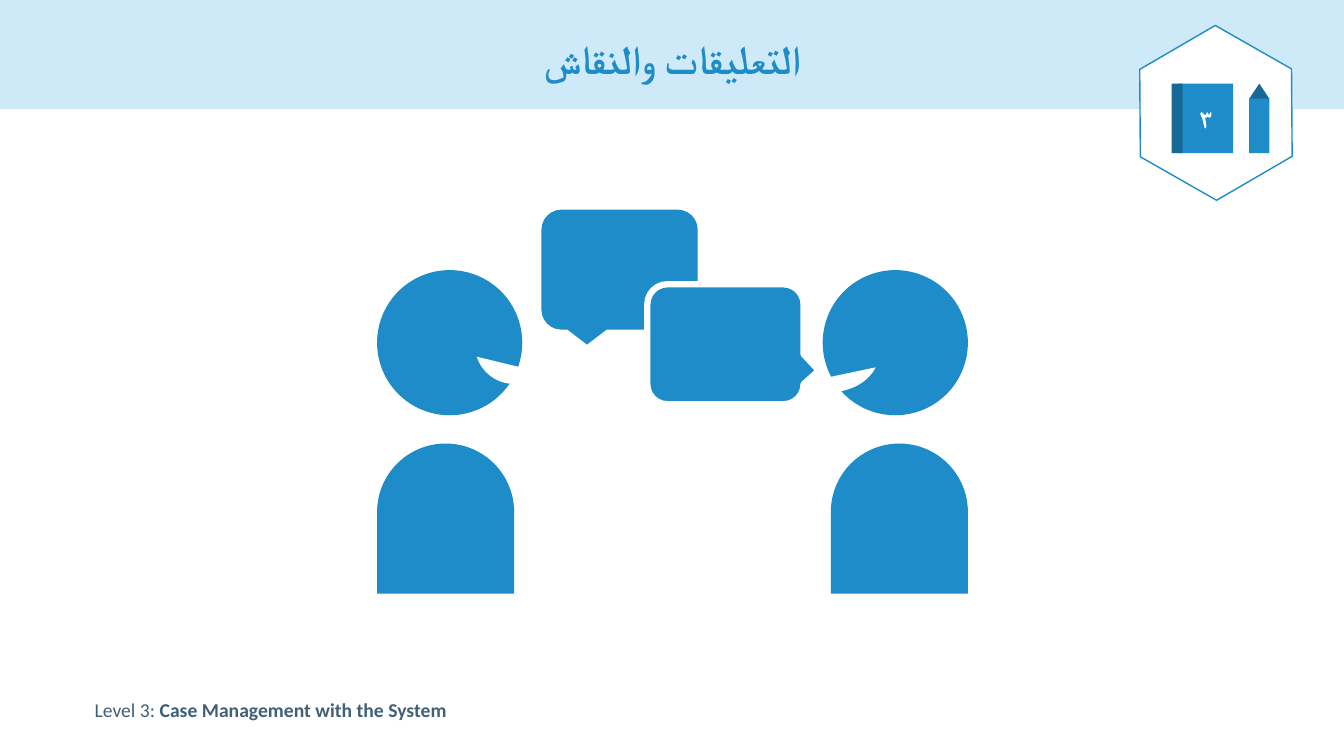
from dataclasses import dataclass

from pptx import Presentation
from pptx import util as u
from pptx.dml import color
from pptx.enum import shapes, text

SHAPE = shapes.MSO_SHAPE


@dataclass(frozen=True)
class Theme:
    blue: str = "1D8CC8"
    dark: str = "166996"
    pale: str = "CEE9F8"
    white: str = "FFFFFF"
    slate: str = "406078"
    latin: str = "Calibri"
    arabic: str = "Arial"
    title: float = 28.8
    number: float = 18
    footer: float = 14


THEME = Theme()


def rgb(value):
    return color.RGBColor.from_string(value)


def apply(target, formats):
    for name, value in formats.items():
        setattr(target, name, value)


def add_figure(page, kind, box, fill, adjust=(), line=None, width=0):
    figure = page.shapes.add_shape(kind, *map(u.Inches, box))
    figure.shadow.inherit = False
    figure.fill.solid()
    figure.fill.fore_color.rgb = rgb(fill)
    for index, value in enumerate(adjust):
        figure.adjustments[index] = value
    if line:
        figure.line.color.rgb = rgb(line)
        figure.line.width = u.Pt(width)
    else:
        figure.line.fill.background()
    return figure


def write(box, spans, size, tint, font, align, anchor):
    apply(box.text_frame, {"word_wrap": True, "vertical_anchor": anchor})
    para = box.text_frame.paragraphs[0]
    para.alignment = align
    for words, bold in spans:
        span = para.add_run()
        span.text = words
        apply(span.font, {"size": u.Pt(size), "name": font, "bold": bold})
        span.font.color.rgb = rgb(tint)
    return para


def add_header(page, box):
    left, top, width, height = box
    add_figure(page, SHAPE.RECTANGLE, box, THEME.pale)
    title = page.shapes.add_textbox(
        *map(u.Inches, (left + 0.92, top + 0.13, width - 1.83, height - 0.13)))
    para = write(title, [("التعليقات والنقاش", True)], THEME.title, THEME.blue,
                 THEME.latin, text.PP_ALIGN.CENTER, text.MSO_ANCHOR.MIDDLE)
    para.line_spacing = 0.9


def add_footer(page, box):
    footer = page.shapes.add_textbox(*map(u.Inches, box))
    write(footer, [("Level 3: ", False), ("Case Management with the System", True)],
          THEME.footer, THEME.slate, THEME.latin,
          text.PP_ALIGN.LEFT, text.MSO_ANCHOR.TOP)


def add_conversation(page, box):
    left, top, width, height = box
    head, body_width, body_height = 1.44, 1.36, 1.49
    right = left + width
    for head_left, body_left in ((left, left), (right - head, right - body_width)):
        add_figure(page, SHAPE.OVAL, (head_left, top + 0.6, head, head), THEME.blue)
        add_figure(page, SHAPE.ROUND_2_SAME_RECTANGLE,
                   (body_left, top + height - body_height, body_width, body_height),
                   THEME.blue, (0.5, 0))

    smile = (27, 97.343)
    add_figure(page, SHAPE.CHORD, (left + 0.97, top + 0.95, 0.78, 0.78),
               THEME.white, smile)
    mirrored = add_figure(page, SHAPE.CHORD, (left + 4.01, top + 1.03, 0.97, 0.78),
                          THEME.white, smile)
    mirrored.element.spPr.xfrm.set("flipH", "1")

    bubble = (1.55, 1.19)
    add_figure(page, SHAPE.ROUNDED_RECTANGULAR_CALLOUT,
               (left + 1.63, top, *bubble), THEME.blue)
    add_figure(page, SHAPE.ROUNDED_RECTANGULAR_CALLOUT,
               (left + 2.68, top + 0.74, *bubble), THEME.blue,
               (0.598, 0.219, 0.167), THEME.white, 4.5)


def add_badge(page, box):
    left, top, width, height = box
    hexagon = add_figure(page, SHAPE.HEXAGON, box, THEME.white,
                         (0.29, 1.155), THEME.blue, 1)
    hexagon.rotation = 29.7
    icon_top, icon_height, tip = top + 0.46, 0.69, 0.15
    book = add_figure(page, SHAPE.RECTANGLE,
                      (left + 0.5, icon_top, 0.54, icon_height), THEME.blue)
    write(book, [("٣", True)], THEME.number, THEME.white, THEME.arabic,
          text.PP_ALIGN.CENTER, text.MSO_ANCHOR.MIDDLE)
    add_figure(page, SHAPE.RECTANGLE,
               (left + 0.43, icon_top, 0.11, icon_height), THEME.dark)
    add_figure(page, SHAPE.ISOSCELES_TRIANGLE,
               (left + 1.2, icon_top, 0.2, tip), THEME.dark)
    add_figure(page, SHAPE.RECTANGLE,
               (left + 1.2, icon_top + tip, 0.2, icon_height - tip), THEME.blue)


def main():
    deck = Presentation()
    apply(deck, {"slide_width": u.Inches(13.33), "slide_height": u.Inches(7.5)})
    page = deck.slides.add_slide(deck.slide_layouts[6])
    add_header(page, (0, 0, 13.33, 1.08))
    add_footer(page, (0.84, 6.87, 4.55, 0.34))
    add_conversation(page, (3.74, 2.08, 5.86, 3.81))
    add_badge(page, (11.19, 0.37, 1.74, 1.5))
    deck.save("out.pptx")


if __name__ == "__main__":
    main()
